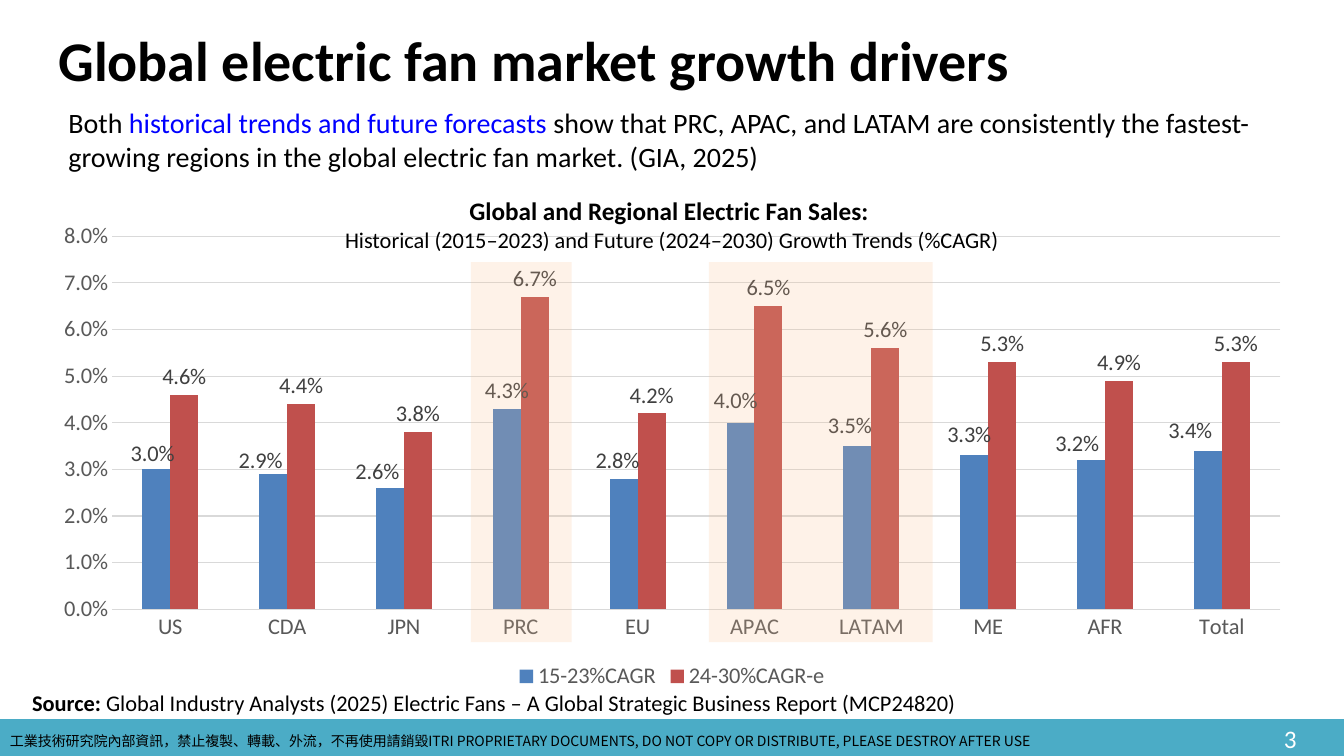
from lxml import etree
from pptx import Presentation
from pptx.chart.data import CategoryChartData
from pptx.dml.color import RGBColor
from pptx.enum import chart as ch, shapes, text
from pptx.oxml import parse_xml
from pptx.oxml.ns import nsdecls, qn
from pptx.util import Inches, Pt

COLORS = {
    "black": "000000", "white": "FFFFFF", "blue": "0000FF", "teal": "4BACC6",
    "history": "4F81BD", "forecast": "C0504D", "highlight": "FAC090",
    "axis": "595959", "label": "404040", "grid": "D9D9D9",
}
RGB = {name: RGBColor.from_string(value) for name, value in COLORS.items()}
CJK = "Noto Sans CJK SC"


def style(font, size, color="black", name="Calibri"):
    font.size, font.name = Pt(size), name
    font.color.rgb = RGB[color]


def add_text(box, paragraphs, align=text.PP_ALIGN.LEFT, anchor=text.MSO_ANCHOR.TOP):
    """Add a text box; each paragraph is (size, color, font, [(text, bold, color), ...])."""
    tf = s.shapes.add_textbox(*map(Inches, box)).text_frame
    tf.word_wrap, tf.vertical_anchor = True, anchor
    for i, (size, color, name, runs) in enumerate(paragraphs):
        p = tf.add_paragraph() if i else tf.paragraphs[0]
        p.alignment = align
        style(p.font, size, color, name)
        for words, bold, run_color in runs:
            r = p.add_run()
            r.text, r.font.bold = words, bold
            r.font.color.rgb = RGB[run_color]
            # Text runs take their East Asian face from a separate element
            r.font.size, r.font.name = Pt(size), name
            etree.SubElement(r._r.rPr, qn("a:ea"), typeface=CJK)
    return tf


prs = Presentation()
prs.slide_width, prs.slide_height = Inches(13.33), Inches(7.5)
s = prs.slides.add_slide(prs.slide_layouts[6])

# Footer
bar = s.shapes.add_shape(shapes.MSO_SHAPE.RECTANGLE, 0, Inches(7.14), Inches(13.33), Inches(0.36))
bar.shadow.inherit = False
bar.fill.solid()
bar.fill.fore_color.rgb = bar.line.color.rgb = RGB["teal"]
bar.line.width = Pt(1)
notice = ("工業技術研究院內部資訊，禁止複製、轉載、外流，不再使用請銷毀"
          "ITRI PROPRIETARY DOCUMENTS, DO NOT COPY OR DISTRIBUTE, PLEASE DESTROY AFTER USE")
add_text((0, 7.22, 11.86, 0.27), [(10, "black", CJK, [(notice, False, "black")])])
add_text((0.22, 6.79, 11.38, 0.37), [(16, "black", "Calibri", [
    ("Source: ", True, "black"),
    ("Global Industry Analysts (2025) Electric Fans – A Global Strategic Business Report (MCP24820)",
     False, "black")])])

# Growth chart
data = CategoryChartData(number_format="0.0%")
data.categories = ["US", "CDA", "JPN", "PRC", "EU", "APAC", "LATAM", "ME", "AFR", "Total"]
data.add_series("15-23%CAGR", [0.03, 0.029, 0.026, 0.043, 0.028, 0.04, 0.035, 0.033, 0.032, 0.034])
data.add_series("24-30%CAGR-e", [0.046, 0.044, 0.038, 0.067, 0.042, 0.065, 0.056, 0.053, 0.049, 0.053])
chart = s.shapes.add_chart(ch.XL_CHART_TYPE.COLUMN_CLUSTERED, Inches(0.38), Inches(2.12),
                           Inches(12.57), Inches(4.77), data).chart
style(chart.font, 16)
chart.has_title = False
chart.has_legend = True
chart.legend.position = ch.XL_LEGEND_POSITION.BOTTOM
chart.legend.include_in_layout = False
style(chart.legend.font, 16, "axis")

for axis in (chart.category_axis, chart.value_axis):
    axis.major_tick_mark = axis.minor_tick_mark = ch.XL_TICK_MARK.NONE
    style(axis.tick_labels.font, 16, "axis")
values = chart.value_axis
values.minimum_scale, values.maximum_scale, values.major_unit = 0, 0.08, 0.01
values.tick_labels.number_format = "0.0%"
values.tick_labels.number_format_is_linked = False
values.format.line.fill.background()
for line in (values.major_gridlines.format.line, chart.category_axis.format.line):
    line.color.rgb = RGB["grid"]
    line.width = Pt(0.75)

plot = chart.plots[0]
plot.gap_width, plot.overlap, plot.vary_by_categories = 219, 0, False
for series, color in zip(plot.series, ("history", "forecast")):
    series.format.fill.solid()
    series.format.fill.fore_color.rgb = RGB[color]
    labels = series.data_labels
    labels.show_value = True
    labels.number_format, labels.number_format_is_linked = "0.0%", False
    labels.position = ch.XL_LABEL_POSITION.OUTSIDE_END
    style(labels.font, 16, "label")

# Historical labels sit slightly left of their bars: category index -> shift in chart fractions
LABEL_SHIFTS = {0: (-0.003, 0.004), 1: (-0.01, 0.01), 2: (-0.01, 0.004), 4: (-0.005, 0),
                5: (-0.004, -0.008), 6: (-0.006, -0.004), 7: (-0.004, -0.006),
                8: (-0.011, 0.004), 9: (-0.014, -0.004)}
for index, (dx, dy) in LABEL_SHIFTS.items():
    label = plot.series[0].points[index].data_label
    style(label.font, 16, "label")
    label.position = ch.XL_LABEL_POSITION.OUTSIDE_END
    dLbl = label._dLbl
    dLbl.find(qn("c:idx")).addnext(parse_xml(
        f'<c:layout {nsdecls("c")}><c:manualLayout><c:x val="{dx}"/><c:y val="{dy}"/>'
        '</c:manualLayout></c:layout>'))

plot_area = chart._chartSpace.chart.plotArea
for old in plot_area.findall(qn("c:layout")):
    plot_area.remove(old)
plot_area.insert(0, parse_xml(
    f'<c:layout {nsdecls("c")}><c:manualLayout><c:layoutTarget val="inner"/>'
    '<c:xMode val="edge"/><c:yMode val="edge"/><c:x val="0.058"/><c:y val="0.047"/>'
    '<c:w val="0.922"/><c:h val="0.776"/></c:manualLayout></c:layout>'))

# Fastest-growing regions
for left, width in ((4.67, 1), (7.03, 2.22)):
    region = s.shapes.add_shape(shapes.MSO_SHAPE.RECTANGLE, Inches(left), Inches(2.6),
                                Inches(width), Inches(3.77))
    region.shadow.inherit = False
    region.line.fill.background()
    region.fill.solid()
    region.fill.fore_color.rgb = RGB["highlight"]
    fill_color = region._element.spPr.find(qn("a:solidFill"))[0]
    etree.SubElement(fill_color, qn("a:alpha"), val="20000")

# Headings
add_text((0.58, 1, 12.29, 0.77), [(20, "black", "Calibri", [
    ("Both ", False, "black"),
    ("historical trends and future forecasts ", False, "blue"),
    ("show that PRC, APAC, and LATAM are consistently the fastest-growing regions "
     "in the global electric fan market. (GIA, 2025)", False, "black")])])
add_text((1.86, 1.89, 9.61, 0.67), [
    (18, "black", "Calibri", [("Global and Regional Electric Fan Sales: ", True, "black")]),
    (16, "black", "Calibri",
     [("Historical (2015–2023) and Future (2024–2030) Growth Trends (%CAGR)", False, "black")]),
], text.PP_ALIGN.CENTER)
title = add_text((0.58, 0.24, 9.67, 0.69), [
    (40, "black", "Calibri", [("Global electric fan market growth drivers", True, "black")]),
], anchor=text.MSO_ANCHOR.MIDDLE)
title.margin_left = title.margin_right = title.margin_top = title.margin_bottom = 0
add_text((9.96, 7.13, 3, 0.4), [(18, "white", "Calibri", [("3", False, "white")])],
         text.PP_ALIGN.RIGHT, text.MSO_ANCHOR.MIDDLE)

prs.save("out.pptx")
